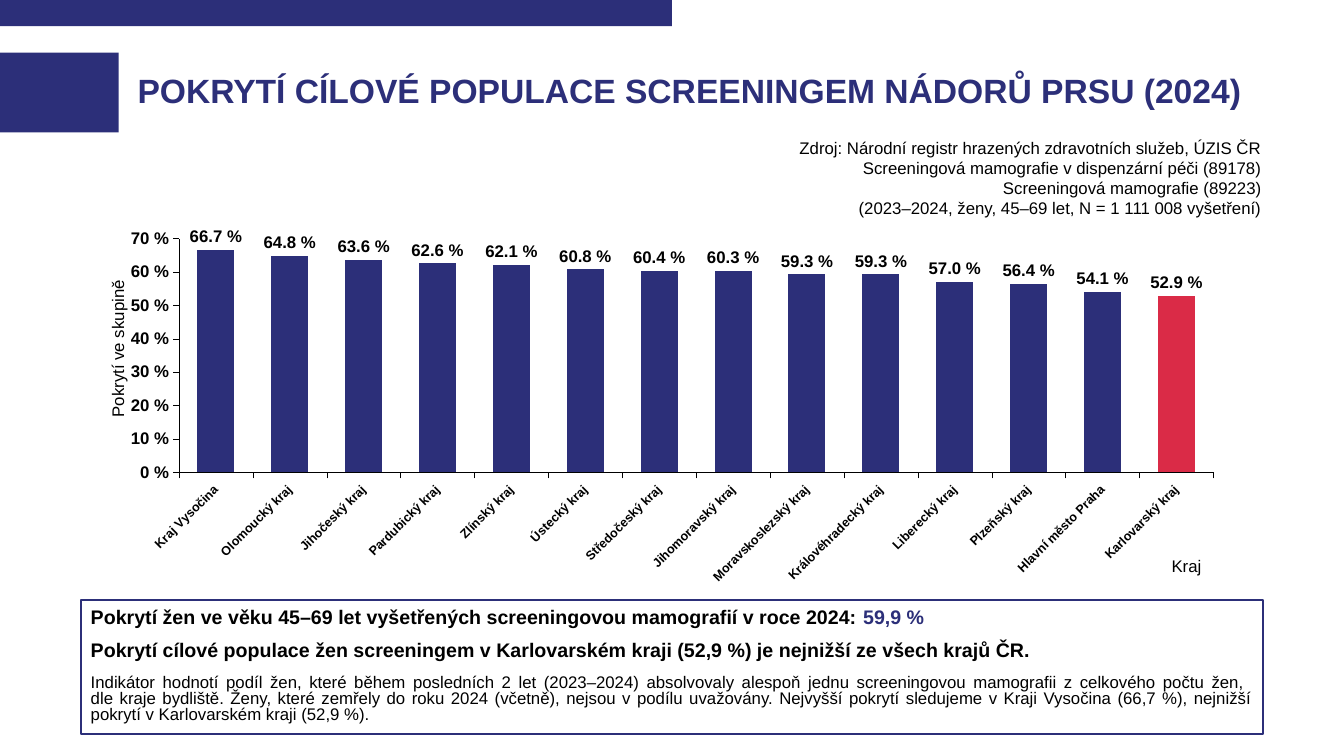
import pptx
import pptx.chart.data
import pptx.dml.color
import pptx.enum.chart
import pptx.enum.shapes
import pptx.enum.text
import pptx.oxml
import pptx.oxml.ns
import pptx.util

EMU_PER_PX = 9525
FONT = "Arial"
COLOURS = {"navy": "2C2F79", "red": "DA2B47", "black": "000000"}
ALIGN = pptx.enum.text.PP_ALIGN
ANCHOR = pptx.enum.text.MSO_ANCHOR

COVERAGE = {
    "Kraj Vysočina": 0.667, "Olomoucký kraj": 0.648, "Jihočeský kraj": 0.636,
    "Pardubický kraj": 0.626, "Zlínský kraj": 0.621, "Ústecký kraj": 0.608,
    "Středočeský kraj": 0.604, "Jihomoravský kraj": 0.603,
    "Moravskoslezský kraj": 0.593, "Královéhradecký kraj": 0.593,
    "Liberecký kraj": 0.57, "Plzeňský kraj": 0.564,
    "Hlavní město Praha": 0.541, "Karlovarský kraj": 0.529,
}


def px(length):
    return pptx.util.Emu(length * EMU_PER_PX)


def rgb(name):
    return pptx.dml.color.RGBColor.from_string(COLOURS[name])


def style_font(font, size, colour="black", bold=False):
    font.name, font.size, font.bold = FONT, pptx.util.Pt(size), bold
    font.color.rgb = rgb(colour)


def write(paragraph, text, size=12, colour="black", bold=False,
          align=None, spacing=None, before=None):
    """Append text to a paragraph; a newline becomes a line break."""
    for number, line in enumerate(text.split("\n")):
        if number:
            paragraph.add_line_break()
        run = paragraph.add_run()
        run.text = line
        style_font(run.font, size, colour, bold)
    if align is not None:
        paragraph.alignment = align
    if spacing is not None:
        paragraph.line_spacing = spacing
    if before is not None:
        paragraph.space_before = pptx.util.Pt(before)


def place(element, index, **fractions):
    """Give a chart part a manual layout in fractions of the chart."""
    for old in element.findall(pptx.oxml.ns.qn("c:layout")):
        element.remove(old)
    target = '<c:layoutTarget val="inner"/>' if "w" in fractions else ""
    modes = "".join(f'<c:{key}Mode val="edge"/>' for key in "xy")
    sizes = "".join(f'<c:{key} val="{value}"/>' for key, value in fractions.items())
    element.insert(index, pptx.oxml.parse_xml(
        f'<c:layout {pptx.oxml.ns.nsdecls("c")}><c:manualLayout>'
        f'{target}{modes}{sizes}</c:manualLayout></c:layout>'))


class SlideBuilder:
    def __init__(self, slide, accent="navy"):
        self.slide = slide
        self.accent = accent

    def box(self, left, top, width, height, outline=None):
        """A filled rectangle, or an empty frame when outline is given."""
        shape = self.slide.shapes.add_shape(
            pptx.enum.shapes.MSO_SHAPE.RECTANGLE,
            px(left), px(top), px(width), px(height))
        shape.shadow.inherit = False
        if outline:
            shape.fill.background()
            shape.line.color.rgb = rgb(self.accent)
            shape.line.width = pptx.util.Pt(outline)
        else:
            shape.fill.solid()
            shape.fill.fore_color.rgb = rgb(self.accent)
            shape.line.fill.background()
        return shape.text_frame

    def text_box(self, left, top, width, height):
        frame = self.slide.shapes.add_textbox(
            px(left), px(top), px(width), px(height)).text_frame
        frame.word_wrap = True
        return frame

    def paragraphs(self, frame, paragraphs, **style):
        """Each paragraph is a list of (text, own style) runs."""
        before = style.pop("before", None)
        for number, runs in enumerate(paragraphs):
            paragraph = frame.add_paragraph() if number else frame.paragraphs[0]
            for text, own in runs:
                write(paragraph, text, before=before if number else None,
                      **{**style, **own})

    def axis(self, axis, title, label_size, title_x, title_y, title_turn=0):
        axis.has_major_gridlines = False
        axis.major_tick_mark = pptx.enum.chart.XL_TICK_MARK.OUTSIDE
        axis.minor_tick_mark = pptx.enum.chart.XL_TICK_MARK.NONE
        axis.format.line.color.rgb = rgb("black")
        axis.format.line.width = pptx.util.Pt(0.25)
        style_font(axis.tick_labels.font, label_size, bold=True)
        frame = axis.axis_title.text_frame
        write(frame.paragraphs[0], title)
        body = frame._txBody.bodyPr
        body.set("rot", str(title_turn * 60000))
        body.set("vert", "horz")
        place(axis.axis_title._element, 1, x=title_x, y=title_y)

    def column_chart(self, left, top, width, height, values, highlight):
        data = pptx.chart.data.CategoryChartData()
        data.categories = list(values)
        data.add_series("Pokrytí", list(values.values()))
        chart = self.slide.shapes.add_chart(
            pptx.enum.chart.XL_CHART_TYPE.COLUMN_CLUSTERED,
            px(left), px(top), px(width), px(height), data).chart
        chart.has_title = chart.has_legend = False
        style_font(chart.font, 12, bold=True)
        place(chart._chartSpace.chart.plotArea, 0, x=0.083, y=0.071, w=0.875, h=0.602)

        # Columns and their labels
        plot = chart.plots[0]
        plot.gap_width = plot.overlap = 100
        plot.vary_by_categories = False
        columns = plot.series[0]
        point = columns.points[list(values).index(highlight)]
        for part, colour in ((columns, self.accent), (point, "red")):
            part.format.fill.solid()
            part.format.fill.fore_color.rgb = rgb(colour)
        labels = columns.data_labels
        labels.show_value = True
        labels.position = pptx.enum.chart.XL_LABEL_POSITION.OUTSIDE_END
        labels.number_format = r"0.0\ %"
        labels.number_format_is_linked = False
        style_font(labels.font, 12, bold=True)

        # Axes
        regions, share = chart.category_axis, chart.value_axis
        self.axis(regions, "Kraj", 9, 0.92, 0.88)
        slanted = regions._element.find(pptx.oxml.ns.qn("c:txPr")).bodyPr
        slanted.set("rot", str(-45 * 60000))
        slanted.set("vert", "horz")
        self.axis(share, "Pokrytí ve skupině", 12, 0.02, 0.17, title_turn=-90)
        share.minimum_scale, share.maximum_scale, share.major_unit = 0, 0.7, 0.1
        share.tick_labels.number_format = r"0\ %"
        share.tick_labels.number_format_is_linked = False


def main():
    deck = pptx.Presentation()
    deck.slide_width, deck.slide_height = px(1280), px(720)
    page = SlideBuilder(deck.slides.add_slide(deck.slide_layouts[6]))

    # Header
    page.box(0, 0, 640, 25)
    page.box(0, 50, 113, 76)
    title = page.text_box(131, 50, 1107, 76)
    title.margin_left = 0
    title.vertical_anchor = ANCHOR.MIDDLE
    write(title.paragraphs[0], "POKRYTÍ CÍLOVÉ POPULACE SCREENINGEM NÁDORŮ PRSU (2024)",
          size=24, colour="navy", bold=True, spacing=0.9)

    # Summary
    summary = page.box(77, 571, 1126, 128, outline=1.5)
    summary.word_wrap = True
    summary.vertical_anchor = ANCHOR.MIDDLE
    heading = {"size": 14, "bold": True}
    page.paragraphs(summary, [
        [("Pokrytí žen ve věku 45–69 let vyšetřených screeningovou mamografií "
          "v roce 2024: ", heading),
         ("59,9 %", {**heading, "colour": "navy"})],
        [("Pokrytí cílové populace žen screeningem v Karlovarském kraji (52,9 %) "
          "je nejnižší ze všech krajů ČR.", heading)],
        [("Indikátor hodnotí podíl žen, které během posledních 2 let (2023–2024) "
          "absolvovaly alespoň jednu screeningovou mamografii z celkového počtu žen, \n"
          "dle kraje bydliště. Ženy, které zemřely do roku 2024 (včetně), nejsou "
          "v podílu uvažovány. Nejvyšší pokrytí sledujeme v Kraji Vysočina (66,7 %), "
          "nejnižší pokrytí v Karlovarském kraji (52,9 %).", {})],
    ], align=ALIGN.JUSTIFY, spacing=0.8, before=10)

    # Coverage by region
    page.column_chart(77, 201, 1126, 370, COVERAGE, highlight="Karlovarský kraj")

    # Data source
    source_lines = [
        "Zdroj: Národní registr hrazených zdravotních služeb, ÚZIS ČR",
        "Screeningová mamografie v dispenzární péči (89178)",
        "Screeningová mamografie (89223)",
        "(2023–2024, ženy, 45–69 let, N = 1 111 008 vyšetření)",
    ]
    page.paragraphs(page.text_box(363, 126, 848, 93),
                    [[(line, {})] for line in source_lines], align=ALIGN.RIGHT)

    deck.save("out.pptx")


if __name__ == "__main__":
    main()
